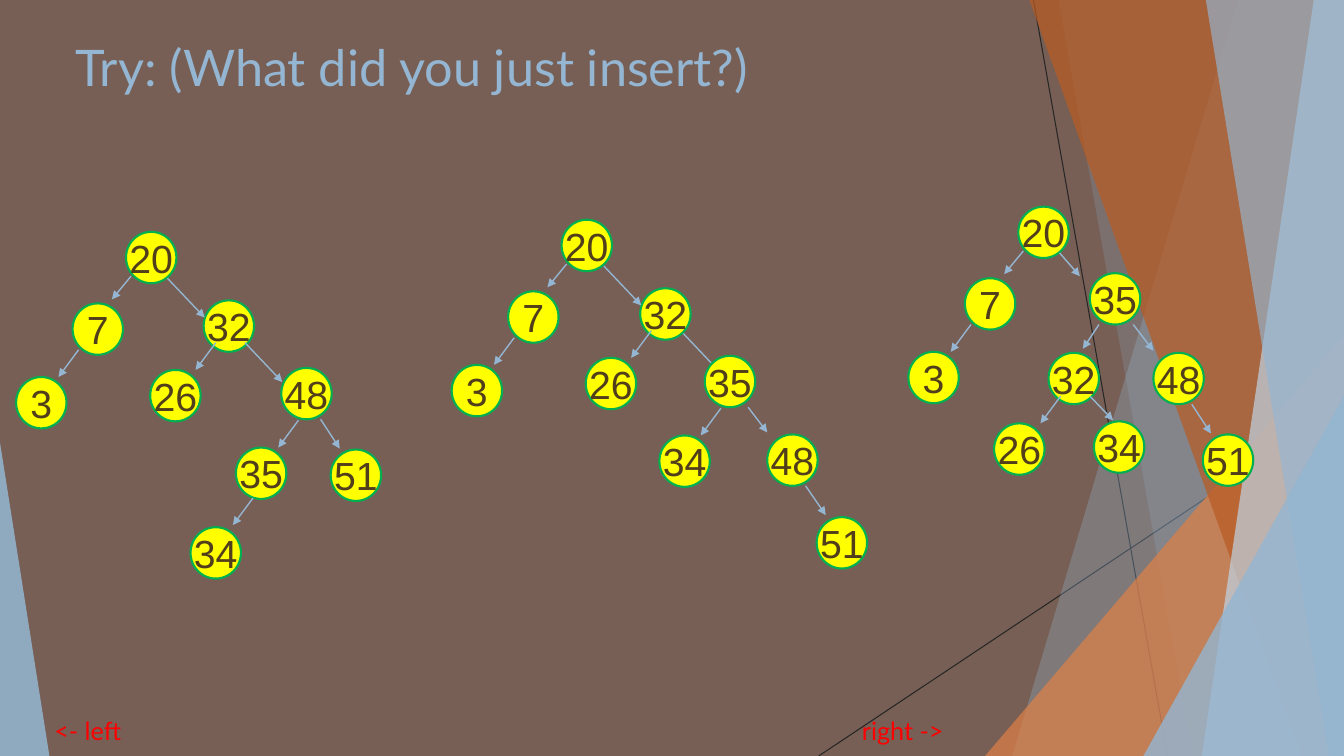
from dataclasses import dataclass

from lxml.etree import SubElement
from pptx import Presentation
from pptx.dml.color import RGBColor as RGB
from pptx.enum.shapes import MSO_CONNECTOR as Connector, MSO_SHAPE as Preset
from pptx.enum.text import MSO_ANCHOR as Anchor, PP_ALIGN as Align
from pptx.oxml.ns import qn
from pptx.util import Inches, Pt

COLUMNS, ROWS = 13.33, 7.5
NODE_WIDTH, NODE_HEIGHT = 0.5, 0.51


@dataclass(frozen=True)
class Theme:
    background: str = "775F55"
    sky: str = "94B6D2"
    pale_sky: str = "BFD3E4"
    orange: str = "DD8047"
    rust: str = "B95B22"
    hairline: str = "262626"
    node_fill: str = "FFFF00"
    node_line: str = "00B050"
    node_text: str = "513E1B"
    hint: str = "FF0000"
    heading_font: str = "Lato"
    node_font: str = "Arial"
    title_size: int = 36
    node_size: int = 28
    hint_size: int = 18


THEME = Theme()

RIBBONS = [
    (12.28, 10.04, THEME.sky, 30),
    (10.5, 11.83, THEME.sky, 20),
    (10.21, 12.91, THEME.rust, 70),
    (13.03, 11.92, THEME.pale_sky, 70),
    (11.96, 13.18, THEME.sky, 65),
]

LEFT_BRANCH_NODES = {20: (0, 0), 7: (-0.53, 0.71), 3: (-1.09, 1.44)}
LEFT_BRANCH_ARROWS = [(20, 0.05, 0.44, -0.19, 0.23), (7, 0.06, 0.46, -0.2, 0.27)]

INSERTED_TREE = dict(
    root=(1.25, 2.3),
    nodes={32: (0.77, 0.68), 48: (1.54, 1.35), 26: (0.24, 1.37),
           51: (2.03, 2.16), 35: (1.09, 2.14), 34: (0.64, 2.93)},
    arrows=[(20, 0.41, 0.46, 0.37, 0.39), (32, 0.41, 0.42, 0.37, 0.39),
            (32, 0.12, 0.42, -0.2, 0.27), (48, 0.39, 0.51, 0.19, 0.29),
            (48, 0.17, 0.52, -0.2, 0.27), (35, 0.17, 0.5, -0.2, 0.27)],
)
FIRST_ROTATION_TREE = dict(
    root=(5.57, 2.18),
    nodes={32: (0.78, 0.68), 48: (2.04, 2.13), 26: (0.24, 1.37),
           51: (2.53, 2.95), 35: (1.42, 1.35), 34: (0.97, 2.14)},
    arrows=[(20, 0.42, 0.46, 0.37, 0.39), (32, 0.11, 0.42, -0.2, 0.27),
            (48, 0.38, 0.51, 0.2, 0.29), (35, 0.16, 0.52, -0.2, 0.27),
            (35, 0.43, 0.51, 0.19, 0.25)],
    arrows_behind=[(32, 0.4, 0.42, 0.37, 0.39)],
)
BALANCED_TREE = dict(
    root=(10.1, 2.05),
    nodes={32: (0.3, 1.45), 48: (1.34, 1.45), 26: (-0.24, 2.15),
           51: (1.83, 2.26), 35: (0.71, 0.66), 34: (0.75, 2.13)},
    arrows=[(20, 0.41, 0.46, 0.2, 0.23), (32, 0.41, 0.43, 0.23, 0.24),
            (32, 0.12, 0.43, -0.2, 0.27), (48, 0.38, 0.51, 0.19, 0.29),
            (35, 0.43, 0.51, 0.2, 0.26), (35, 0.09, 0.51, -0.16, 0.24)],
)


def cells(*counts):
    return [Inches(count) for count in counts]


def write_text(frame, text, *, font, size, color, align=Align.LEFT,
               anchor=Anchor.MIDDLE, wrap=True, inset=None, tab=None):
    frame.word_wrap = wrap
    frame.vertical_anchor = anchor
    if inset is not None:
        frame.margin_left = frame.margin_right = inset
        frame.margin_top = frame.margin_bottom = inset
    paragraph = frame.paragraphs[0]
    paragraph.alignment = align
    if tab is not None:
        stops = SubElement(paragraph._p.get_or_add_pPr(), qn("a:tabLst"))
        SubElement(stops, qn("a:tab"), pos=str(Inches(tab)), algn="l")
    run = paragraph.add_run()
    run.text = text
    run.font.name = font
    run.font.size = Pt(size)
    run.font.color.rgb = RGB.from_string(color)


def paint(shape, color, opacity=100):
    shape.shadow.inherit = False
    shape.line.fill.background()
    shape.fill.solid()
    shape.fill.fore_color.rgb = RGB.from_string(color)
    if opacity < 100:
        tint = shape.fill._xPr.find(qn("a:solidFill"))[0]
        SubElement(tint, qn("a:alpha"), val=str(opacity * 1000))


def draw_line(slide, start, end, color, width, arrow=False):
    line = slide.shapes.add_connector(Connector.STRAIGHT, *cells(*start, *end))
    line.line.color.rgb = RGB.from_string(color)
    line.line.width = Pt(width)
    if arrow:
        SubElement(line.line._get_or_add_ln(), qn("a:tailEnd"), type="triangle")
    SubElement(line._element.spPr, qn("a:effectLst"))


def draw_ribbon(slide, top, bottom, color, opacity):
    outline = slide.shapes.build_freeform(*cells(top, 0), scale=1)
    corners = [(COLUMNS, 0), (COLUMNS, ROWS), (bottom, ROWS)]
    outline.add_line_segments([cells(*corner) for corner in corners], close=True)
    paint(outline.convert_to_shape(), color, opacity)


def draw_wedge(slide, left, top, width, apex, color, opacity):
    wedge = slide.shapes.add_shape(
        Preset.ISOSCELES_TRIANGLE, *cells(left, top, width, ROWS - top))
    wedge.adjustments[0] = apex
    paint(wedge, color, opacity)


def draw_backdrop(slide):
    slide.background.fill.solid()
    slide.background.fill.fore_color.rgb = RGB.from_string(THEME.background)
    draw_line(slide, (10.25, 0), (11.58, ROWS), THEME.hairline, 0.75)
    draw_line(slide, (COLUMNS, 4.03), (8.12, ROWS), THEME.hairline, 0.75)
    for ribbon in RIBBONS[:2]:
        draw_ribbon(slide, *ribbon)
    draw_wedge(slide, 9.77, 3.33, 3.56, 1, THEME.orange, 72)
    for ribbon in RIBBONS[2:]:
        draw_ribbon(slide, *ribbon)
    draw_wedge(slide, 11.34, 3.93, 1.99, 1, THEME.sky, 80)
    draw_wedge(slide, 0, 4.39, 0.49, 0, THEME.sky, 85)


def draw_node(slide, left, top, key):
    node = slide.shapes.add_shape(
        Preset.OVAL, *cells(left, top, NODE_WIDTH, NODE_HEIGHT))
    paint(node, THEME.node_fill)
    node.line.color.rgb = RGB.from_string(THEME.node_line)
    node.line.width = Pt(1.5)
    write_text(node.text_frame, str(key), font=THEME.node_font,
               size=THEME.node_size, color=THEME.node_text,
               align=Align.CENTER, wrap=False, inset=0)


def draw_tree(slide, root, nodes, arrows, arrows_behind=()):
    places = {key: (root[0] + across, root[1] + down)
              for key, (across, down) in (LEFT_BRANCH_NODES | nodes).items()}

    def draw_arrow(parent, across, down, run, drop):
        left, top = places[parent]
        start = left + across, top + down
        draw_line(slide, start, (start[0] + run, start[1] + drop),
                  THEME.sky, 1, arrow=True)

    for arrow in arrows_behind:
        draw_arrow(*arrow)
    for key, place in places.items():
        draw_node(slide, *place, key)
    for arrow in LEFT_BRANCH_ARROWS + arrows:
        draw_arrow(*arrow)


def main():
    deck = Presentation()
    deck.slide_width, deck.slide_height = cells(COLUMNS, ROWS)
    slide = deck.slides.add_slide(deck.slide_layouts[5])
    draw_backdrop(slide)

    title = slide.shapes.title
    title.left, title.top, title.width, title.height = cells(0.65, 0.27, 9.4, 0.78)
    write_text(title.text_frame, "Try: (What did you just insert?)",
               font=THEME.heading_font, size=THEME.title_size, color=THEME.sky)

    directions = slide.shapes.add_textbox(*cells(0.44, 7.05, 11.74, 0.4))
    write_text(directions.text_frame, "<- left\tright ->",
               font=THEME.heading_font, size=THEME.hint_size,
               color=THEME.hint, tab=8.01)

    for tree in (INSERTED_TREE, FIRST_ROTATION_TREE, BALANCED_TREE):
        draw_tree(slide, **tree)
    deck.save("out.pptx")


if __name__ == "__main__":
    main()
